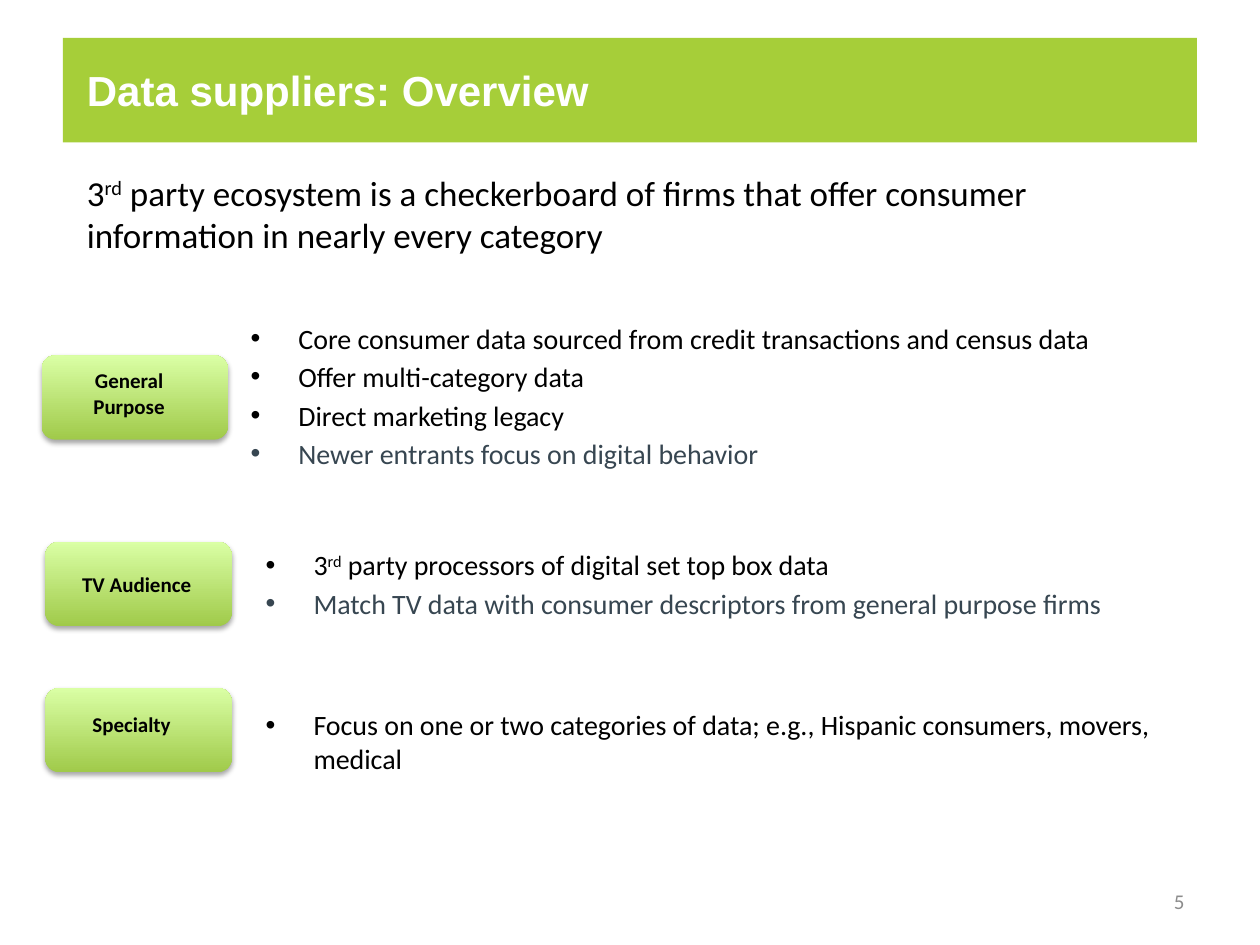
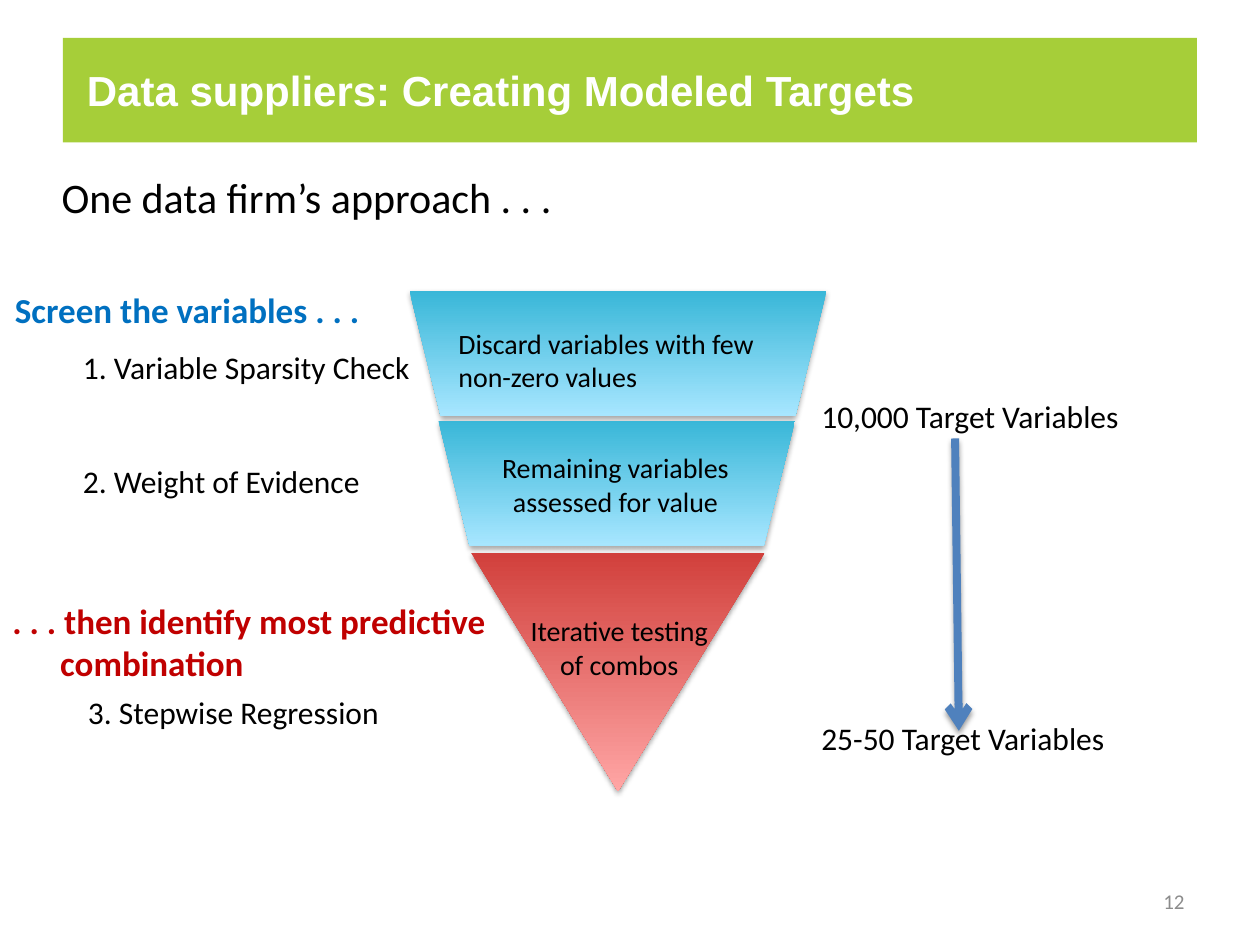
from dataclasses import dataclass

from lxml.etree import SubElement
from pptx import Presentation
from pptx.dml.color import RGBColor as Color
from pptx.enum.shapes import MSO_CONNECTOR as Connector, MSO_SHAPE as Preset
from pptx.enum.text import MSO_ANCHOR as Anchor, MSO_AUTO_SIZE as AutoSize, PP_ALIGN as Align
from pptx.oxml.ns import qn
from pptx.util import Inches, Pt


@dataclass(frozen=True)
class Theme:
    """Colours, fonts and type sizes shared by the slides."""
    band: str = "A6CE39"
    white: str = "FFFFFF"
    black: str = "000000"
    slate: str = "374651"
    grey: str = "8C8C8C"
    screen: str = "0070C0"
    predict: str = "C00000"
    arrow: str = "4F81BD"
    green_fade: tuple = ("A0CA4A", "DAFFA5")
    blue_fade: tuple = ("39B7D8", "A7E6FF")
    red_fade: tuple = ("D1403C", "FFA6A5")
    title_font: str = "Arial"
    body_font: str = "Calibri"
    title: int = 24
    lead: int = 20
    step: int = 18
    body: int = 16
    small: int = 12


class Deck:
    """Draws styled elements on a grid of 100 columns by 75 rows."""
    COLUMNS, ROWS = 100, 75
    HANG = Inches(0.38)

    def __init__(self, theme):
        self.theme = theme
        self.presentation = Presentation()
        self.presentation.slide_width = Inches(10)
        self.presentation.slide_height = Inches(7.5)
        self.slide = None

    def place(self, column, row):
        """Turn grid columns and rows into lengths."""
        return (round(self.presentation.slide_width * column / self.COLUMNS),
                round(self.presentation.slide_height * row / self.ROWS))

    def frame(self, box):
        """Turn a grid box into left, top, width and height."""
        return self.place(*box[:2]) + self.place(*box[2:])

    def new_slide(self, title, number):
        """Start a slide with its title band and number."""
        self.slide = self.presentation.slides.add_slide(self.presentation.slide_layouts[6])
        band = self.slide.shapes.add_shape(Preset.RECTANGLE, *self.frame((5, 3, 90, 8.3)))
        band.shadow.inherit = False
        band.fill.solid()
        band.fill.fore_color.rgb = Color.from_string(self.theme.band)
        band.line.fill.background()
        band.text_frame.margin_left = self.place(1.9, 0)[0]
        self.fill_text(band.text_frame, [title], self.theme.title, color=self.theme.white,
                       bold=True, font=self.theme.title_font)
        self.text((71.7, 69.5, 23.3, 4), [number], self.theme.small, color=self.theme.grey,
                  align=Align.RIGHT, anchor=Anchor.MIDDLE)

    def fill_text(self, text_frame, lines, size, color=None, bold=False, font=None,
                  align=Align.LEFT, gap=0, hanging=False, bullet=False):
        """Fill a text frame; a caret pair marks superscript."""
        for index, line in enumerate(lines):
            paragraph = text_frame.add_paragraph() if index else text_frame.paragraphs[0]
            paragraph.alignment = align
            if index:
                paragraph.space_before = Pt(gap)
            properties = paragraph._p.get_or_add_pPr()
            if hanging or bullet:
                properties.set("marL", str(self.HANG))
                properties.set("indent", str(-self.HANG))
            if bullet:
                SubElement(properties, qn("a:buFont")).set("typeface", "Arial")
                SubElement(properties, qn("a:buChar")).set("char", "•")
            for position, part in enumerate(line.split("^")):
                run = paragraph.add_run()
                run.text = part
                run.font.name = font or self.theme.body_font
                run.font.size = Pt(size)
                run.font.bold = bold
                run.font.color.rgb = Color.from_string(color or self.theme.black)
                if position % 2:
                    run._r.get_or_add_rPr().set("baseline", "30000")

    def text(self, box, lines, size, anchor=Anchor.TOP, fit=False, **style):
        """Add a text box, either wrapped or fitted to its text."""
        text_frame = self.slide.shapes.add_textbox(*self.frame(box)).text_frame
        text_frame.word_wrap = not fit
        text_frame.auto_size = AutoSize.SHAPE_TO_FIT_TEXT if fit else AutoSize.NONE
        text_frame.vertical_anchor = anchor
        self.fill_text(text_frame, lines, size, **style)
        return text_frame

    def bullets(self, box, lines, muted_last=False):
        """Add a bulleted list, optionally with its last line muted."""
        text_frame = self.text(box, lines, self.theme.body, gap=2.8, bullet=True)
        if muted_last:
            for run in text_frame.paragraphs[-1].runs:
                run.font.color.rgb = Color.from_string(self.theme.slate)

    def soft_shadow(self, shape, opacity=35):
        """Give a shape or connector a soft shadow below."""
        properties = shape._element.spPr
        effects = properties.find(qn("a:effectLst"))
        if effects is None:
            effects = SubElement(properties, qn("a:effectLst"))
        shadow = SubElement(effects, qn("a:outerShdw"), blurRad=str(Pt(3.1)),
                            dist=str(Pt(1.8)), dir="5400000", rotWithShape="0")
        color = SubElement(shadow, qn("a:srgbClr"), val=self.theme.black)
        SubElement(color, qn("a:alpha"), val=str(opacity * 1000))

    def faded_shape(self, preset, box, fade, flipped=False):
        """Add a gradient shape that fades from bottom to top."""
        shape = self.slide.shapes.add_shape(preset, *self.frame(box))
        shape.fill.gradient()
        shape.fill.gradient_angle = 90
        for stop, color in zip(shape.fill.gradient_stops, fade):
            stop.color.rgb = Color.from_string(color)
        shape.line.fill.background()
        shape.shadow.inherit = False
        self.soft_shadow(shape)
        if flipped:
            shape._element.spPr.find(qn("a:xfrm")).set("flipV", "1")

    def arrow(self, start, end):
        """Add a thick straight arrow."""
        connector = self.slide.shapes.add_connector(
            Connector.STRAIGHT, *self.place(*start), *self.place(*end))
        connector.line.color.rgb = Color.from_string(self.theme.arrow)
        connector.line.width = Pt(4.5)
        SubElement(connector._element.spPr.find(qn("a:ln")), qn("a:tailEnd"), type="arrow")
        self.soft_shadow(connector, opacity=38)


def overview(deck):
    """Build the overview of supplier types."""
    theme = deck.theme
    deck.new_slide("Data suppliers: Overview", "5")
    deck.text((5.9, 13.1, 86.2, 6.9),
              ["3^rd^ party ecosystem is a checkerboard of firms that offer consumer "
               "information in nearly every category"], theme.lead)
    suppliers = [
        ("General Purpose", (3.3, 28.2), (4.6, 28.7), (18.9, 25, 74.9, 13.3), True,
         ["Core consumer data sourced from credit transactions and census data",
          "Offer multi-category data", "Direct marketing legacy",
          "Newer entrants focus on digital behavior"]),
        ("TV Audience", (3.6, 43), (5.2, 44.9), (20.1, 43, 74.9, 7.8), True,
         ["3^rd^ party processors of digital set top box data",
          "Match TV data with consumer descriptors from general purpose firms"]),
        ("Specialty", (3.6, 54.6), (4.8, 56), (20.1, 55.7, 74.9, 5), False,
         ["Focus on one or two categories of data; e.g., Hispanic consumers, movers, medical"]),
    ]
    for name, button, label, list_box, muted_last, facts in suppliers:
        deck.faded_shape(Preset.ROUNDED_RECTANGLE, (*button, 14.8, 6.7), theme.green_fade)
        deck.text((*label, 11.3, 5.2), [name], theme.small, bold=True, align=Align.CENTER)
        deck.bullets(list_box, facts, muted_last)


def modeled_targets(deck):
    """Build the funnel from many variables to few."""
    theme = deck.theme
    deck.new_slide("Data suppliers: Creating Modeled Targets", "12")
    deck.text((3.9, 13.1, 90, 6.9), ["One data firm’s approach . . ."], theme.title)
    funnel = [
        (Preset.TRAPEZOID, (32.5, 23.1, 33.1, 9.9), theme.blue_fade, (35.4, 25.4, 26, 6.4),
         Align.LEFT, ["Discard variables with few", "non-zero values"]),
        (Preset.TRAPEZOID, (34.8, 33.4, 28.3, 9.9), theme.blue_fade, (38.7, 35.3, 20.3, 6.4),
         Align.CENTER, ["Remaining variables", "assessed for value"]),
        (Preset.ISOSCELES_TRIANGLE, (37.4, 43.9, 23.3, 18.9), theme.red_fade,
         (41, 48.2, 16.3, 6.4), Align.CENTER, ["Iterative testing", "of combos"]),
    ]
    for preset, box, fade, label_box, align, lines in funnel:
        deck.faded_shape(preset, box, fade, flipped=True)
        deck.text(label_box, lines, theme.body, fit=True, align=align)
    steps = [
        ((5.6, 27.1, 28.9, 16.2), ["1. Variable Sparsity Check", "2. Weight of Evidence"]),
        ((6, 54.5, 25.4, 4), ["3. Stepwise Regression"]),
        ((64.2, 31, 25.9, 4), ["10,000 Target Variables"]),
        ((64.2, 56.6, 24.7, 4), ["25-50 Target Variables"]),
    ]
    for box, lines in steps:
        deck.text(box, lines, theme.step, fit=True, gap=44)
    phases = [
        ((0.2, 22.4, 31.3, 4.5), "Screen the variables . . .", theme.screen),
        ((0, 47.1, 40.3, 4.5), ". . . then identify most predictive combination", theme.predict),
    ]
    for box, phrase, color in phases:
        deck.text(box, [phrase], theme.lead, color=color, bold=True, hanging=True)
    deck.arrow((75.8, 34.8), (76.1, 58))


def main():
    """Build both slides and save them."""
    deck = Deck(Theme())
    overview(deck)
    modeled_targets(deck)
    deck.presentation.save("out.pptx")


if __name__ == "__main__":
    main()
